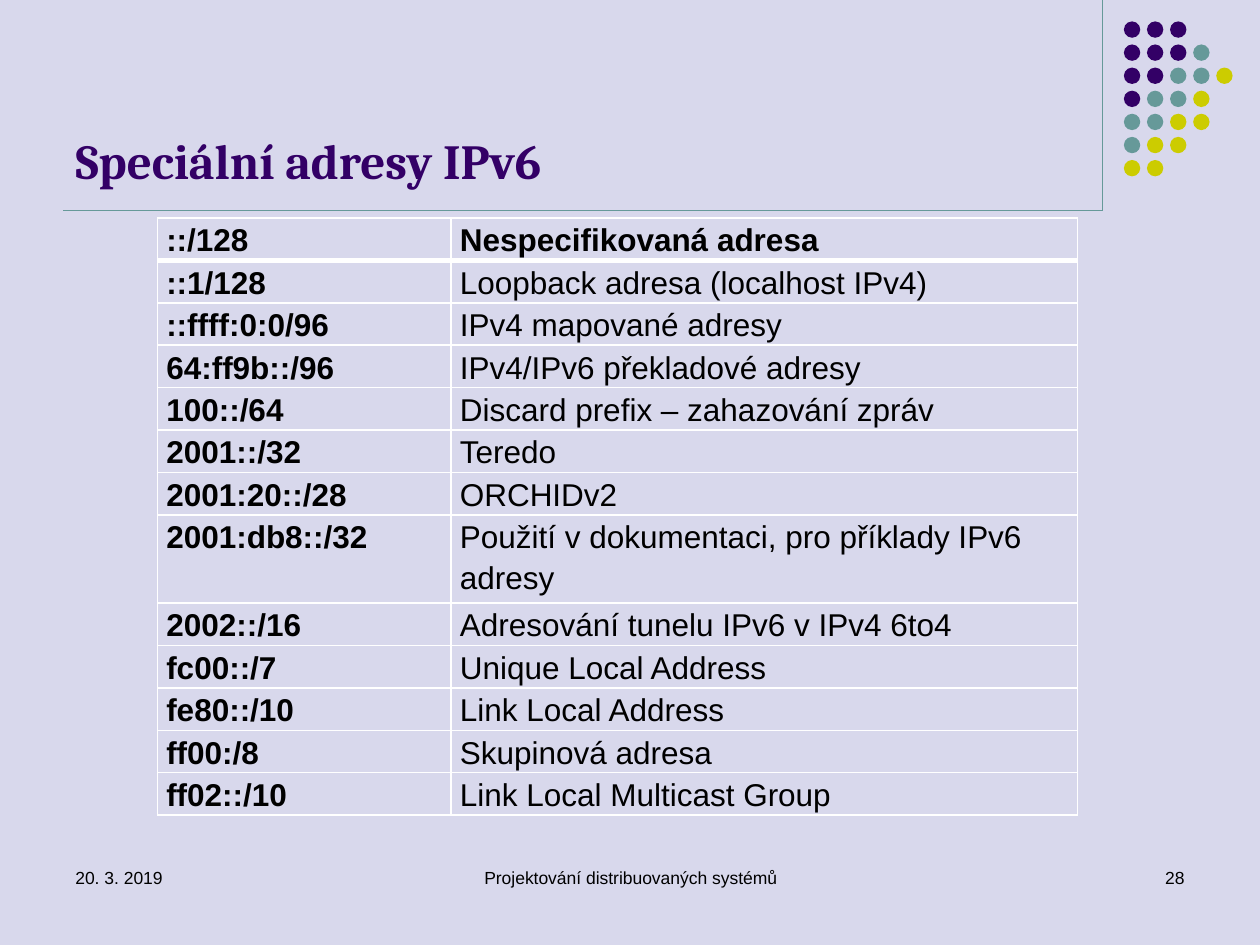
from dataclasses import dataclass

from lxml import etree
from pptx import Presentation
from pptx.dml.color import RGBColor
from pptx.enum.shapes import MSO_CONNECTOR, MSO_SHAPE
from pptx.enum.text import MSO_ANCHOR, PP_ALIGN
from pptx.oxml.ns import qn
from pptx.util import Inches, Pt

STRAIGHT = MSO_CONNECTOR.STRAIGHT
OVAL = MSO_SHAPE.OVAL
TOP, BOTTOM = MSO_ANCHOR.TOP, MSO_ANCHOR.BOTTOM
LEFT, CENTER, RIGHT = PP_ALIGN.LEFT, PP_ALIGN.CENTER, PP_ALIGN.RIGHT
TITLE_ONLY = 5


@dataclass(frozen=True)
class Theme:
    background: str = "D8D8EC"
    purple: str = "330066"
    teal: str = "669999"
    yellow: str = "CCCC00"
    text: str = "000000"
    border: str = "FFFFFF"
    heading_font: str = "Cambria"
    body_font: str = "Arial"
    title_size: int = 28
    table_size: int = 18
    footer_size: int = 10


ADDRESSES = [
    ("::/128", "Nespecifikovaná adresa"),
    ("::1/128", "Loopback adresa (localhost IPv4)"),
    ("::ffff:0:0/96", "IPv4 mapované adresy"),
    ("64:ff9b::/96", "IPv4/IPv6 překladové adresy"),
    ("100::/64", "Discard prefix – zahazování zpráv"),
    ("2001::/32", "Teredo"),
    ("2001:20::/28", "ORCHIDv2"),
    ("2001:db8::/32", "Použití v dokumentaci, pro příklady IPv6 adresy"),
    ("2002::/16", "Adresování tunelu IPv6 v IPv4 6to4"),
    ("fc00::/7", "Unique Local Address"),
    ("fe80::/10", "Link Local Address"),
    ("ff00:/8", "Skupinová adresa"),
    ("ff02::/10", "Link Local Multicast Group"),
]
TALL_ROW = 7
DOT_ROWS = ["PPP", "PPPT", "PPTTY", "PTTY", "TTYY", "TYY", "YY"]
FOOTERS = [
    ("20. 3. 2019", 0.5, 2.33, LEFT),
    ("Projektování distribuovaných systémů", 3.42, 3.17, CENTER),
    ("28", 7.17, 2.33, RIGHT),
]


def write_text(frame, text, *, font, size, color, bold=False, align=LEFT, spacing=None):
    paragraph = frame.paragraphs[0]
    paragraph.alignment = align
    if spacing:
        paragraph.line_spacing = spacing
    run = paragraph.add_run()
    run.text = text
    run.font.name = font
    run.font.size = Pt(size)
    run.font.bold = bold
    run.font.color.rgb = RGBColor.from_string(color)


class SlideBuilder:
    def __init__(self, presentation, theme):
        self.theme = theme
        self.slide = presentation.slides.add_slide(presentation.slide_layouts[TITLE_ONLY])
        fill = self.slide.background.fill
        fill.solid()
        fill.fore_color.rgb = RGBColor.from_string(theme.background)

    def title(self, text, left, top, width, height):
        shape = self.slide.shapes.title
        shape.left, shape.top = Inches(left), Inches(top)
        shape.width, shape.height = Inches(width), Inches(height)
        shape.text_frame.vertical_anchor = BOTTOM
        write_text(shape.text_frame, text, font=self.theme.heading_font,
                   size=self.theme.title_size, color=self.theme.purple, bold=True)

    def line(self, start, end):
        points = [Inches(value) for value in (*start, *end)]
        connector = self.slide.shapes.add_connector(STRAIGHT, *points)
        connector.line.color.rgb = RGBColor.from_string(self.theme.teal)
        connector.line.width = Pt(0.75)
        properties = connector._element.find(qn("p:spPr"))
        etree.SubElement(properties, qn("a:effectLst"))

    def dots(self, rows, left, top, pitch, diameter):
        colors = {"P": self.theme.purple, "T": self.theme.teal, "Y": self.theme.yellow}
        group = self.slide.shapes.add_group_shape()
        for row, codes in enumerate(rows):
            for column, code in enumerate(codes):
                dot = group.shapes.add_shape(
                    OVAL, Inches(left + column * pitch), Inches(top + row * pitch),
                    Inches(diameter), Inches(diameter))
                dot.shadow.inherit = False
                dot.fill.solid()
                dot.fill.fore_color.rgb = RGBColor.from_string(colors[code])
                dot.line.fill.background()

    def text(self, text, left, top, width, height, align):
        box = self.slide.shapes.add_textbox(
            Inches(left), Inches(top), Inches(width), Inches(height))
        box.text_frame.word_wrap = True
        box.text_frame.vertical_anchor = TOP
        write_text(box.text_frame, text, font=self.theme.body_font,
                   size=self.theme.footer_size, color=self.theme.text, align=align)

    def cell_borders(self, cell, widths):
        properties = cell._tc.get_or_add_tcPr()
        for index, (side, width) in enumerate(widths.items()):
            border = etree.Element(qn(f"a:ln{side}"), w=str(Pt(width)))
            fill = etree.SubElement(border, qn("a:solidFill"))
            etree.SubElement(fill, qn("a:srgbClr"), val=self.theme.border)
            properties.insert(index, border)

    def table(self, rows, left, top, column_widths, row_heights):
        table = self.slide.shapes.add_table(
            len(rows), len(column_widths), Inches(left), Inches(top),
            Inches(sum(column_widths)), Inches(sum(row_heights))).table
        table.first_row = table.horz_banding = False
        for column, width in zip(table.columns, column_widths):
            column.width = Inches(width)
        for row_index, values in enumerate(rows):
            table.rows[row_index].height = Inches(row_heights[row_index])
            for column_index, value in enumerate(values):
                cell = table.cell(row_index, column_index)
                cell.margin_left = cell.margin_right = Inches(0.07)
                cell.margin_top = cell.margin_bottom = 0
                cell.fill.background()
                self.cell_borders(cell, {
                    "L": 1, "R": 1,
                    "T": 3 if row_index == 1 else 1,
                    "B": 3 if row_index == 0 else 1})
                write_text(cell.text_frame, value, font=self.theme.body_font,
                           size=self.theme.table_size, color=self.theme.text,
                           bold=row_index == 0 or column_index == 0, spacing=1.15)


def main():
    presentation = Presentation()
    presentation.slide_width, presentation.slide_height = Inches(10), Inches(7.5)
    builder = SlideBuilder(presentation, Theme())
    corner = (8.75, 1.67)
    builder.line((8.75, 0), corner)
    builder.dots(DOT_ROWS, 8.92, 0.17, 1.1 / 6, 0.13)
    builder.line((0.5, 1.67), corner)
    builder.title("Speciální adresy IPv6", 0.5, 0.13, 8.25, 1.42)
    tall_height = 0.7
    row_height = (4.74 - tall_height) / (len(ADDRESSES) - 1)
    heights = [tall_height if index == TALL_ROW else row_height
               for index in range(len(ADDRESSES))]
    builder.table(ADDRESSES, 1.25, 1.73, [2.33, 4.97], heights)
    for text, left, width, align in FOOTERS:
        builder.text(text, left, 6.83, width, 0.5, align)
    presentation.save("out.pptx")


if __name__ == "__main__":
    main()
